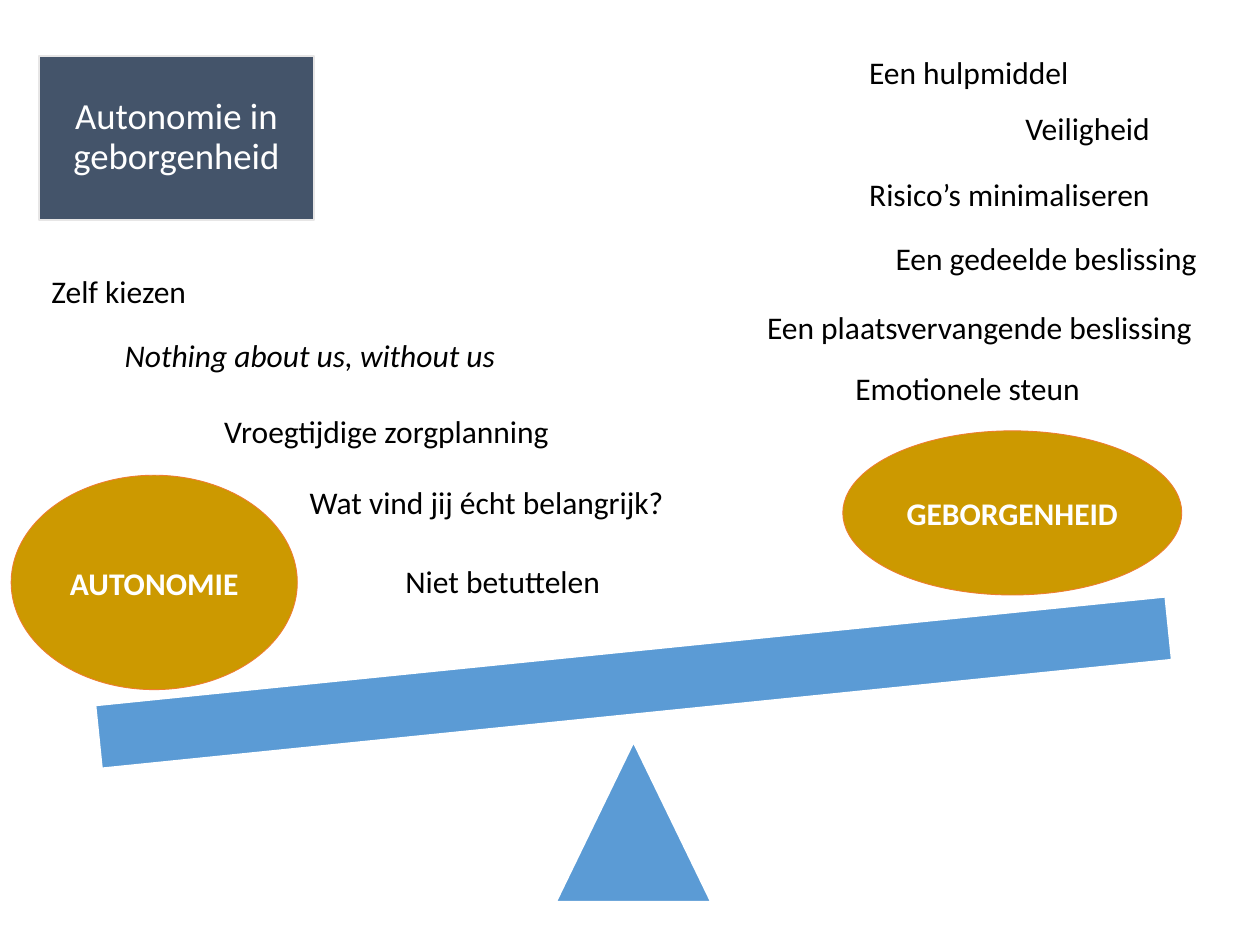
from pptx import Presentation
from pptx.dml.color import RGBColor
from pptx.enum import shapes, text
from pptx.util import Pt

WHITE = RGBColor(0xFF, 0xFF, 0xFF)
BLACK = RGBColor(0, 0, 0)
SLATE = RGBColor(0x44, 0x54, 0x6A)
LIGHT_GREY = RGBColor(0xE7, 0xE6, 0xE6)
BLUE = RGBColor(0x5B, 0x9B, 0xD5)
GOLD = RGBColor(0xCC, 0x99, 0x00)
ORANGE = RGBColor(0xED, 0x7D, 0x31)

LABEL_HEIGHT = 29

# Each label: wording, offset from left, offset from top, width, italic
AUTONOMY_LABELS = [
    ("Zelf kiezen", 0, 0, 232, False),
    ("Nothing about us, without us", 41.8, 36.6, 253.5, True),
    ("Vroegtijdige zorgplanning", 98.7, 79.8, 239, False),
    ("Wat vind jij écht belangrijk?", 147.6, 120.2, 227, False),
    ("Niet betuttelen", 202.3, 165.5, 186.5, False),
]
SECURITY_LABELS = [
    ("Een hulpmiddel", 58.3, 0, 139, False),
    ("Veiligheid", 147.6, 32.4, 124, False),
    ("Risico’s minimaliseren", 58.3, 70, 193, False),
    ("Een gedeelde beslissing", 73.4, 106.6, 215.3, False),
    ("Een plaatsvervangende beslissing", 0, 146, 271.4, False),
    ("Emotionele steun", 50.4, 180.7, 173.5, False),
]


def format_font(font, color, **values):
    font.color.rgb = color
    for name, value in {"name": "Calibri", "size": Pt(18), **values}.items():
        setattr(font, name, value)


def paint(shape, fill, line, line_width):
    shape.fill.solid()
    shape.fill.fore_color.rgb = fill
    shape.line.color.rgb = line
    shape.line.width = Pt(line_width)


def add_title(slide, left, top, width, height):
    title = slide.shapes.title
    frame = title.text_frame
    box = {"left": left, "top": top, "width": width, "height": height}
    for name, value in box.items():
        setattr(title, name, Pt(value))
    for side in ("left", "top", "right", "bottom"):
        setattr(frame, f"margin_{side}", Pt(6.5))
    paint(title, SLATE, LIGHT_GREY, 1)
    frame.text = "Autonomie in geborgenheid"
    frame.word_wrap = True
    frame.auto_size = text.MSO_AUTO_SIZE.NONE
    frame.vertical_anchor = text.MSO_ANCHOR.MIDDLE
    paragraph = frame.paragraphs[0]
    paragraph.alignment = text.PP_ALIGN.CENTER
    paragraph.line_spacing = 0.9
    format_font(paragraph.font, WHITE, size=Pt(21))


def add_seesaw(slide, left, top):
    def add_part(kind, x, y, width, height, fill, line, line_width):
        shape = slide.shapes.add_shape(
            kind, Pt(left + x), Pt(top + y), Pt(width), Pt(height))
        shape.shadow.inherit = False
        paint(shape, fill, line, line_width)
        return shape

    # Pivot and tilted beam
    kinds = shapes.MSO_SHAPE
    add_part(kinds.ISOSCELES_TRIANGLE, 311, 177.4, 89.3, 92, BLUE, WHITE, 1.5)
    beam = add_part(kinds.RECTANGLE, 48.2, 125.5, 615, 36.7, BLUE, WHITE, 1.5)
    beam.rotation = 354.2

    # Weights
    for wording, *box in [("AUTONOMIE", 0, 25.4, 163.5, 122.5),
                          ("GEBORGENHEID", 475.2, 0, 193.7, 93.8)]:
        weight = add_part(kinds.OVAL, *box, GOLD, ORANGE, 0.5)
        frame = weight.text_frame
        frame.text = wording
        frame.vertical_anchor = text.MSO_ANCHOR.MIDDLE
        paragraph = frame.paragraphs[0]
        paragraph.alignment = text.PP_ALIGN.CENTER
        format_font(paragraph.font, WHITE, bold=True)


def add_labels(slide, left, top, labels):
    for wording, x, y, width, italic in labels:
        label = slide.shapes.add_textbox(
            Pt(left + x), Pt(top + y), Pt(width), Pt(LABEL_HEIGHT))
        frame = label.text_frame
        frame.word_wrap = True
        frame.auto_size = text.MSO_AUTO_SIZE.SHAPE_TO_FIT_TEXT
        frame.text = wording
        format_font(frame.paragraphs[0].font, BLACK, italic=italic)


def main():
    presentation = Presentation()
    presentation.slide_width, presentation.slide_height = Pt(720), Pt(540)
    slide = presentation.slides.add_slide(presentation.slide_layouts[5])
    add_title(slide, 22.3, 31.8, 157, 94)
    add_seesaw(slide, 6.4, 246.2)
    add_labels(slide, 22.3, 152, AUTONOMY_LABELS)
    add_labels(slide, 431.3, 26.6, SECURITY_LABELS)
    presentation.save("out.pptx")


if __name__ == "__main__":
    main()
